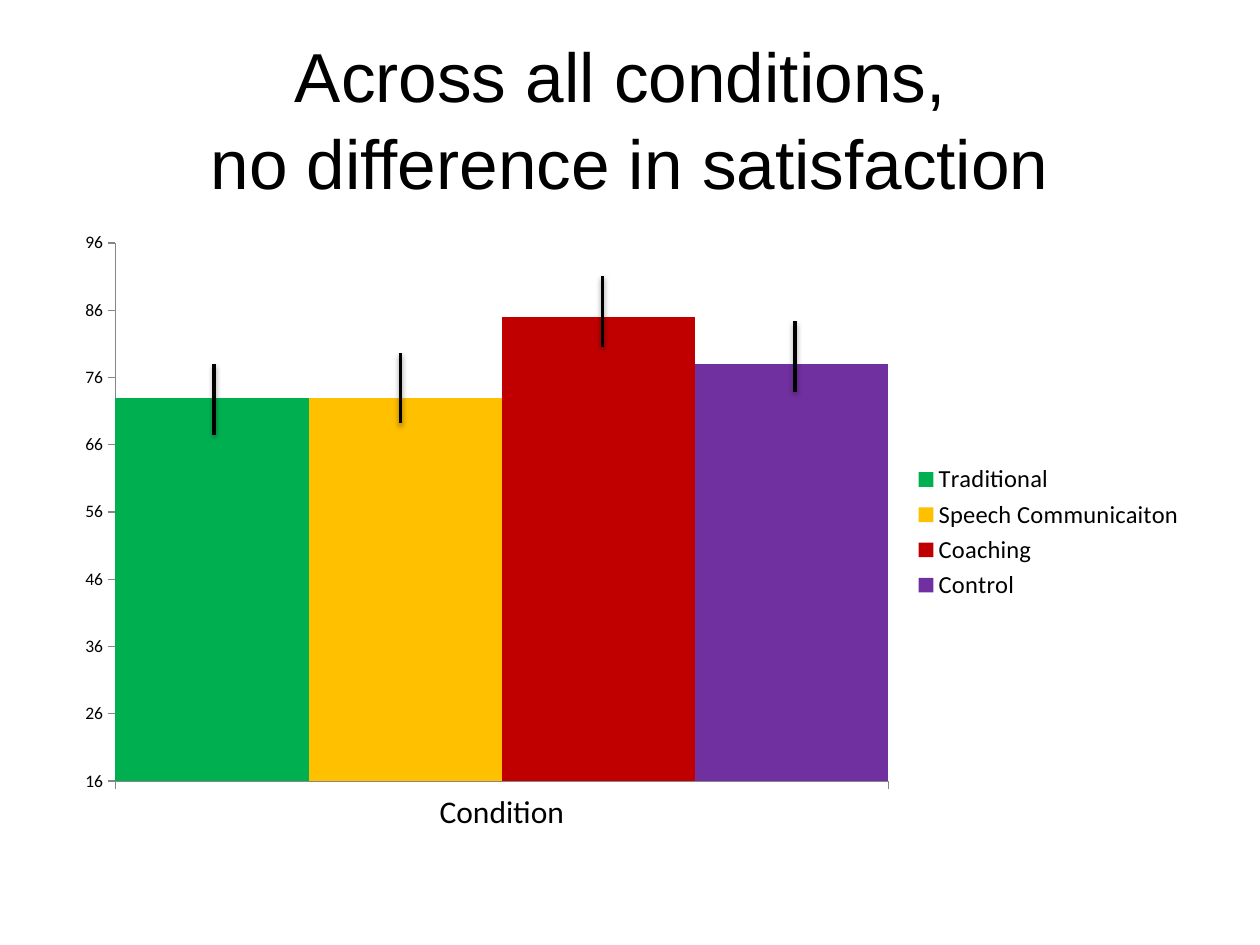
from lxml.etree import SubElement, fromstring
from pptx import Presentation
from pptx.chart.data import CategoryChartData
from pptx.dml.color import RGBColor
from pptx.enum.chart import XL_CHART_TYPE, XL_LEGEND_POSITION, XL_TICK_LABEL_POSITION, XL_TICK_MARK
from pptx.enum.shapes import MSO_CONNECTOR
from pptx.enum.text import MSO_ANCHOR, PP_ALIGN
from pptx.oxml.ns import nsdecls, qn
from pptx.util import Inches, Pt

THEME = {
    "title_font": "Arial", "chart_font": "Calibri",
    "title": Pt(39.6), "category": Pt(18), "legend": Pt(14), "scale": Pt(10),
    "ink": RGBColor.from_string("000000"), "axis": RGBColor.from_string("868686"),
}
# name, value, colour, error bar centre and top (inches)
CONDITIONS = [
    ("Traditional", 73, "00B050", 1.7, 2.89),
    ("Speech Communicaiton", 73, "FFC000", 3.18, 2.8),
    ("Coaching", 85, "C00000", 4.78, 2.19),
    ("Control", 78, "7030A0", 6.31, 2.55),
]
ERROR_BAR_HEIGHT = Inches(0.56)
PLOT_AREA = {"x": 0.046, "y": 0.036, "w": 0.682, "h": 0.863}

deck = Presentation()
deck.slide_width, deck.slide_height = Inches(10), Inches(7.5)
page = deck.slides.add_slide(deck.slide_layouts[6])
margin = Inches(0.5)
content_width = deck.slide_width - 2 * margin

# Title
box = page.shapes.add_textbox(margin, Inches(0.3), content_width, Inches(1.25))
frame = box.text_frame
frame.word_wrap = True
frame.vertical_anchor = MSO_ANCHOR.MIDDLE
para = frame.paragraphs[0]
para.text = "Across all conditions, \vno difference in satisfaction"
para.alignment = PP_ALIGN.CENTER
para.line_spacing = 1.05
para.font.name, para.font.size = THEME["title_font"], THEME["title"]
para.font.color.rgb = THEME["ink"]

# Column chart
chart_data = CategoryChartData()
chart_data.categories = ["Condition"]
for name, value, *_ in CONDITIONS:
    chart_data.add_series(name, [value])
chart = page.shapes.add_chart(XL_CHART_TYPE.COLUMN_CLUSTERED, margin, Inches(1.75),
                              content_width, Inches(4.95), chart_data).chart
chart.has_title = False
chart.font.name, chart.font.size = THEME["chart_font"], THEME["category"]
chart.font.color.rgb = THEME["ink"]
plot = chart.plots[0]
plot.gap_width, plot.overlap, plot.vary_by_categories = 0, 0, False
for series, (_, _, colour, *_) in zip(plot.series, CONDITIONS):
    series.format.fill.solid()
    series.format.fill.fore_color.rgb = RGBColor.from_string(colour)

# Axes
scale = chart.value_axis
scale.minimum_scale, scale.maximum_scale, scale.major_unit = 16, 96, 10
scale.has_major_gridlines = False
scale.tick_labels.font.size = THEME["scale"]
for axis in (scale, chart.category_axis):
    axis.major_tick_mark = XL_TICK_MARK.OUTSIDE
    axis.tick_label_position = XL_TICK_LABEL_POSITION.NEXT_TO_AXIS
    axis.format.line.color.rgb = THEME["axis"]
    axis.format.line.width = Pt(0.75)

# Legend
chart.has_legend = True
chart.legend.position = XL_LEGEND_POSITION.RIGHT
chart.legend.include_in_layout = False
chart.legend.font.size = THEME["legend"]

# Inner plot area, as shares of the chart
plot_area = chart._chartSpace.chart.plotArea
for old_layout in plot_area.findall(qn("c:layout")):
    plot_area.remove(old_layout)
layout = fromstring(f"<c:layout {nsdecls('c')}><c:manualLayout/></c:layout>")
settings = {"layoutTarget": "inner", "xMode": "edge", "yMode": "edge", **PLOT_AREA}
for key, setting in settings.items():
    SubElement(layout[0], qn(f"c:{key}")).set("val", str(setting))
plot_area.insert(0, layout)

# Error bars with a soft shadow below
for *_, centre, top in CONDITIONS:
    x, y = Inches(centre), Inches(top)
    bar = page.shapes.add_connector(MSO_CONNECTOR.STRAIGHT, x, y, x, y + ERROR_BAR_HEIGHT)
    bar.line.color.rgb, bar.line.width = THEME["ink"], Pt(2)
    effects = SubElement(bar._element.spPr, qn("a:effectLst"))
    shadow = SubElement(effects, qn("a:outerShdw"), blurRad=str(Pt(3.1)), dist=str(Pt(1.6)),
                        dir="5400000", rotWithShape="0")
    tint = SubElement(shadow, qn("a:srgbClr"), val=str(THEME["ink"]))
    SubElement(tint, qn("a:alpha"), val="38000")

deck.save("out.pptx")
